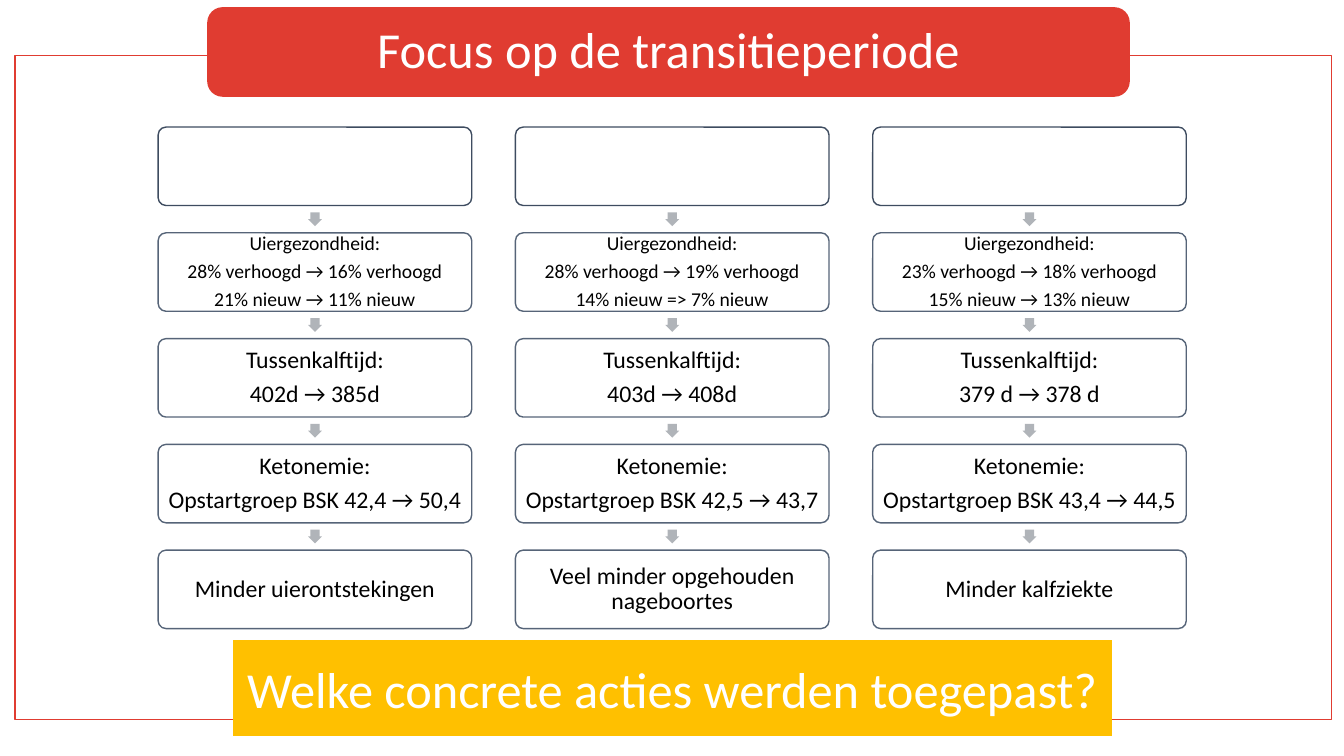
from dataclasses import dataclass

from lxml.etree import SubElement
from pptx import Presentation
from pptx.dml.color import RGBColor
from pptx.enum.shapes import MSO_SHAPE as Geometry
from pptx.enum.text import MSO_ANCHOR as Anchor, MSO_AUTO_SIZE as AutoSize, PP_ALIGN as Align
from pptx.oxml.ns import qn
from pptx.util import Pt


@dataclass(frozen=True)
class Theme:
    font: str = "Calibri"
    red: str = "E03C31"
    amber: str = "FFC000"
    white: str = "FFFFFF"
    black: str = "000000"
    header_line: str = "3E4C60"
    step_line: str = "44546A"
    arrow: str = "B0B4B9"
    headline_size: int = 36
    step_size: int = 17
    dense_size: int = 14


THEME = Theme()

# Grid of farm columns, in points
GRID_LEFT, GRID_TOP = 113, 90.8
COLUMN_PITCH, ROW_PITCH = 255.2, 75.55
BOX_WIDTH, BOX_HEIGHT = 224, 56
ARROW_SIZE = 9.8

# One list of steps per farm, one list of lines per step
FARMS = [
    [
        ["Uiergezondheid:", "28% verhoogd → 16% verhoogd", "21% nieuw → 11% nieuw"],
        ["Tussenkalftijd:", "402d → 385d"],
        ["Ketonemie:", "Opstartgroep BSK 42,4 → 50,4"],
        ["Minder uierontstekingen"],
    ],
    [
        ["Uiergezondheid:", "28% verhoogd → 19% verhoogd", "14% nieuw => 7% nieuw"],
        ["Tussenkalftijd:", "403d → 408d"],
        ["Ketonemie:", "Opstartgroep BSK 42,5 → 43,7"],
        ["Veel minder opgehouden nageboortes"],
    ],
    [
        ["Uiergezondheid:", "23% verhoogd → 18% verhoogd", "15% nieuw → 13% nieuw"],
        ["Tussenkalftijd:", "379 d → 378 d"],
        ["Ketonemie:", "Opstartgroep BSK 43,4 → 44,5"],
        ["Minder kalfziekte"],
    ],
]


def add_block(slide, geometry, left, top, width, height, fill=None, line=None):
    block = slide.shapes.add_shape(geometry, Pt(left), Pt(top), Pt(width), Pt(height))
    block.shadow.inherit = False
    if fill:
        block.fill.solid()
        block.fill.fore_color.rgb = RGBColor.from_string(fill)
    else:
        block.fill.background()
    if line:
        block.line.color.rgb = RGBColor.from_string(line)
        block.line.width = Pt(1)
    else:
        block.line.fill.background()
    return block


def set_opacity(block, percent):
    for color in block.element.spPr.iter(qn("a:srgbClr")):
        SubElement(color, qn("a:alpha"), val=str(percent * 1000))


def write_lines(shape, lines, size, color, side=7.2, edge=3.6, spacing=0.9):
    frame = shape.text_frame
    frame.word_wrap = True
    frame.auto_size = AutoSize.NONE
    frame.vertical_anchor = Anchor.MIDDLE
    frame.margin_left = frame.margin_right = Pt(side)
    frame.margin_top = frame.margin_bottom = Pt(edge)
    frame.text = "\n".join(lines)
    for paragraph in frame.paragraphs:
        paragraph.alignment = Align.CENTER
        paragraph.line_spacing = spacing
        paragraph.space_after = Pt(size * 0.33 if len(lines) > 1 else 0)
        paragraph.font.name = THEME.font
        paragraph.font.size = Pt(size)
        paragraph.font.color.rgb = RGBColor.from_string(color)


def add_title(slide, text):
    banner = add_block(slide, Geometry.ROUNDED_RECTANGLE, 148.5, 5.6, 658, 63,
                       THEME.red, THEME.red)
    title = slide.shapes.title
    title.left, title.top, title.width, title.height = Pt(151.5), Pt(8.7), Pt(652), Pt(56.5)
    write_lines(title, [text], THEME.headline_size, THEME.white, side=25, edge=0)
    banner.element.addnext(title.element)  # title text lies on the banner


def add_step_box(slide, left, top, line):
    box = add_block(slide, Geometry.ROUNDED_RECTANGLE, left, top, BOX_WIDTH, BOX_HEIGHT,
                    THEME.white, line)
    box.adjustments[0] = 0.1
    return box


def add_down_arrow(slide, left, box_top):
    gap = ROW_PITCH - BOX_HEIGHT
    arrow = add_block(slide, Geometry.RIGHT_ARROW, left + (BOX_WIDTH - ARROW_SIZE) / 2,
                      box_top - (gap + ARROW_SIZE) / 2, ARROW_SIZE, ARROW_SIZE, THEME.arrow)
    arrow.rotation = 90
    arrow.adjustments[0] = 0.667
    arrow.adjustments[1] = 0.5


def add_farm(slide, left, steps):
    add_step_box(slide, left, GRID_TOP, THEME.header_line)
    for row, lines in enumerate(steps, start=1):
        top = GRID_TOP + row * ROW_PITCH
        add_down_arrow(slide, left, top)
        step = add_step_box(slide, left, top, THEME.step_line)
        set_opacity(step, 90)
        size = THEME.dense_size if len(lines) > 2 else THEME.step_size
        write_lines(step, lines, size, THEME.black, side=1.6, edge=1.6)


def main():
    deck = Presentation()
    deck.slide_width, deck.slide_height = Pt(960), Pt(540)
    slide = deck.slides.add_slide(deck.slide_layouts[5])

    # Frame and title
    add_block(slide, Geometry.RECTANGLE, 10.8, 39.6, 940.3, 474.5, line=THEME.red)
    add_title(slide, "Focus op de transitieperiode")

    # Results per farm
    for column, steps in enumerate(FARMS):
        add_farm(slide, GRID_LEFT + column * COLUMN_PITCH, steps)

    # Closing question
    question = add_block(slide, Geometry.FLOWCHART_PROCESS, 166.3, 457.2, 627.8, 68.4,
                         THEME.amber)
    write_lines(question, ["Welke concrete acties werden toegepast?"],
                THEME.headline_size, THEME.white, spacing=1.0)

    deck.save("out.pptx")


if __name__ == "__main__":
    main()
